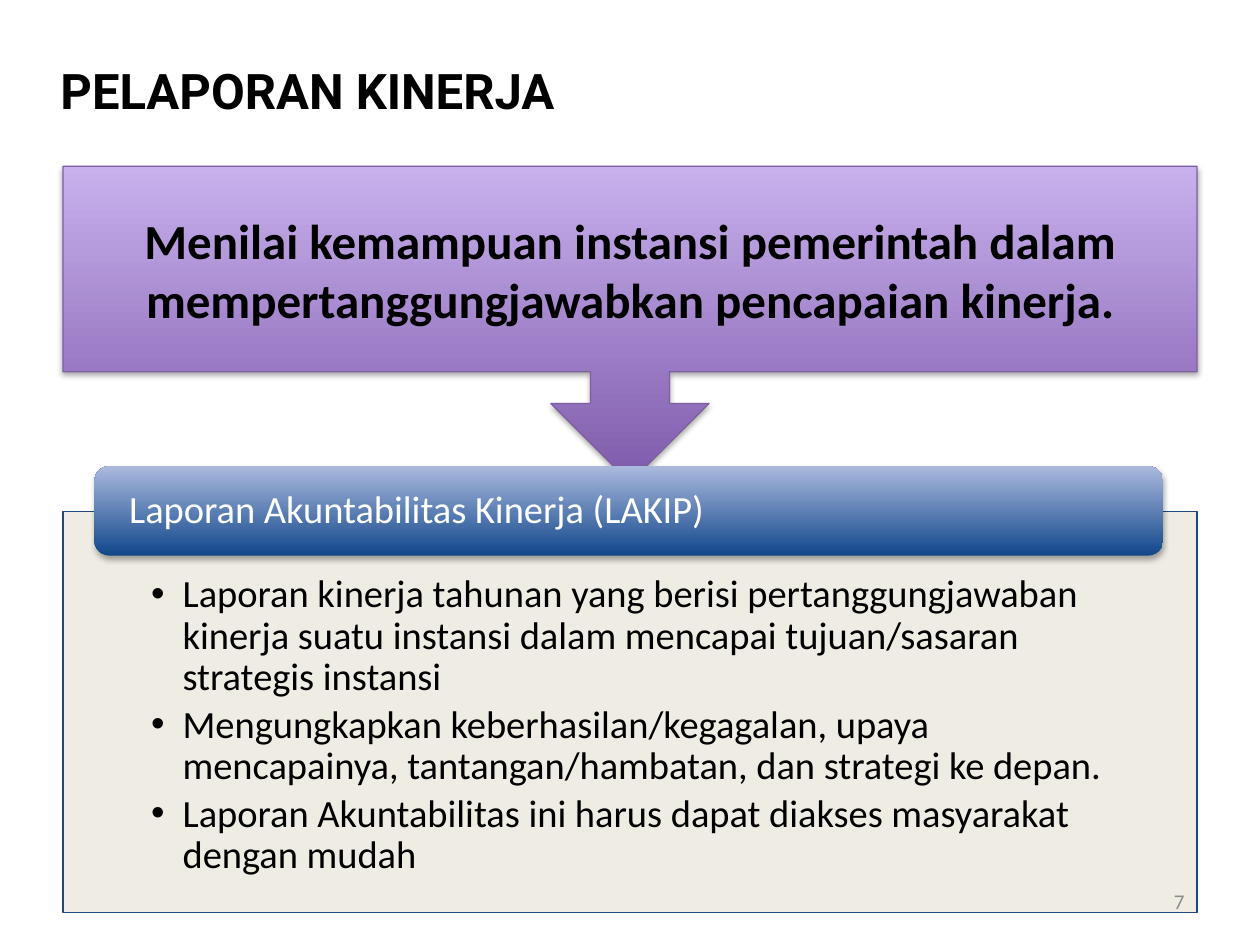
from lxml import etree
from pptx import Presentation
from pptx.dml.color import RGBColor
from pptx.enum import shapes, text
from pptx.oxml import ns
from pptx.util import Inches, Pt

REPORT_POINTS = [
    "Laporan kinerja tahunan yang berisi pertanggungjawaban kinerja suatu instansi "
    "dalam mencapai tujuan/sasaran strategis instansi",
    "Mengungkapkan keberhasilan/kegagalan, upaya mencapainya, tantangan/hambatan, "
    "dan strategi ke depan.",
    "Laporan Akuntabilitas ini harus dapat diakses masyarakat dengan mudah",
]


def write(shape, lines, size=22, color="000000", font="Calibri", bold=False,
          align=text.PP_ALIGN.LEFT, anchor=text.MSO_ANCHOR.MIDDLE,
          insets=(0.1, 0.05, 0.1, 0.05), spacing=1.0, after=0, bullet=None):
    """Fill a shape with one paragraph per line; insets are left, top, right, bottom."""
    frame = shape.text_frame
    frame.word_wrap = True
    frame.auto_size = text.MSO_AUTO_SIZE.NONE
    frame.vertical_anchor = anchor
    frame.margin_left, frame.margin_top, frame.margin_right, frame.margin_bottom = map(Inches, insets)
    frame.text = "\n".join(lines)
    for paragraph in frame.paragraphs:
        paragraph.alignment = align
        paragraph.line_spacing = spacing
        paragraph.space_before = Pt(0)
        paragraph.space_after = Pt(after)
        if bullet:
            properties = paragraph._p.get_or_add_pPr()
            properties.set("marL", str(Inches(0.25)))
            properties.set("indent", str(Inches(-0.25)))
            etree.SubElement(properties, ns.qn("a:buFont"), typeface="Arial")
            etree.SubElement(properties, ns.qn("a:buChar"), char=bullet)
        for run in paragraph.runs:
            run.font.name, run.font.size, run.font.bold = font, Pt(size), bold
            run.font.color.rgb = RGBColor.from_string(color)


def shade(shape, bottom, top):
    """Give a shape a vertical gradient and a soft shadow below it."""
    shape.fill.gradient()
    shape.fill.gradient_angle = 90
    for stop, color in zip(shape.fill.gradient_stops, (bottom, top)):
        stop.color.rgb = RGBColor.from_string(color)
    shape.shadow.inherit = False
    effects = shape._element.spPr.find(ns.qn("a:effectLst"))
    shadow = etree.SubElement(effects, ns.qn("a:outerShdw"), blurRad=str(Pt(3.1)),
                              dist=str(Pt(1.8)), dir="5400000", rotWithShape="0")
    shadow_color = etree.SubElement(shadow, ns.qn("a:srgbClr"), val="000000")
    etree.SubElement(shadow_color, ns.qn("a:alpha"), val="35000")


prs = Presentation()
prs.slide_width, prs.slide_height = Inches(10), Inches(7.5)
slide = prs.slides.add_slide(prs.slide_layouts[5])

title = slide.shapes.title
title.left, title.top, title.width, title.height = map(Inches, (0.38, 0.3, 9, 0.83))
write(title, ["PELAPORAN KINERJA"], size=28, font="Roboto", bold=True)

purpose = slide.shapes.add_shape(shapes.MSO_SHAPE.DOWN_ARROW_CALLOUT,
                                 Inches(0.5), Inches(1.32), Inches(9), Inches(2.51))
shade(purpose, "7F5BAB", "C8B0ED")
purpose.line.color.rgb = RGBColor.from_string("7D60A0")
purpose.line.width = Pt(0.75)
write(purpose, ["Menilai kemampuan instansi pemerintah dalam mempertanggungjawabkan pencapaian kinerja."],
      size=28, bold=True, align=text.PP_ALIGN.CENTER)

report = slide.shapes.add_shape(shapes.MSO_SHAPE.RECTANGLE,
                                Inches(0.5), Inches(4.06), Inches(9), Inches(3.18))
report.shadow.inherit = False
report.fill.solid()
report.fill.fore_color.rgb = RGBColor.from_string("EEECE1")
report_color = report._element.spPr.find(ns.qn("a:solidFill"))[0]
etree.SubElement(report_color, ns.qn("a:alpha"), val="90000")
report.line.color.rgb = RGBColor.from_string("1F497D")
report.line.width = Pt(0.75)
write(report, REPORT_POINTS, anchor=text.MSO_ANCHOR.TOP, insets=(0.7, 0.5, 0.7, 0.17),
      spacing=0.9, after=3.3, bullet="•")

heading = slide.shapes.add_shape(shapes.MSO_SHAPE.ROUNDED_RECTANGLE,
                                 Inches(0.75), Inches(3.7), Inches(8.48), Inches(0.71))
shade(heading, "11478B", "ABB9DE")
heading.line.fill.background()
write(heading, ["Laporan Akuntabilitas Kinerja (LAKIP)"], color="FFFFFF",
      insets=(0.24, 0, 0.24, 0), spacing=0.9)

page_number = slide.shapes.add_textbox(Inches(7.17), Inches(6.95), Inches(2.33), Inches(0.4))
write(page_number, ["7"], size=12, color="8C8C8C", align=text.PP_ALIGN.RIGHT)

prs.save("out.pptx")
